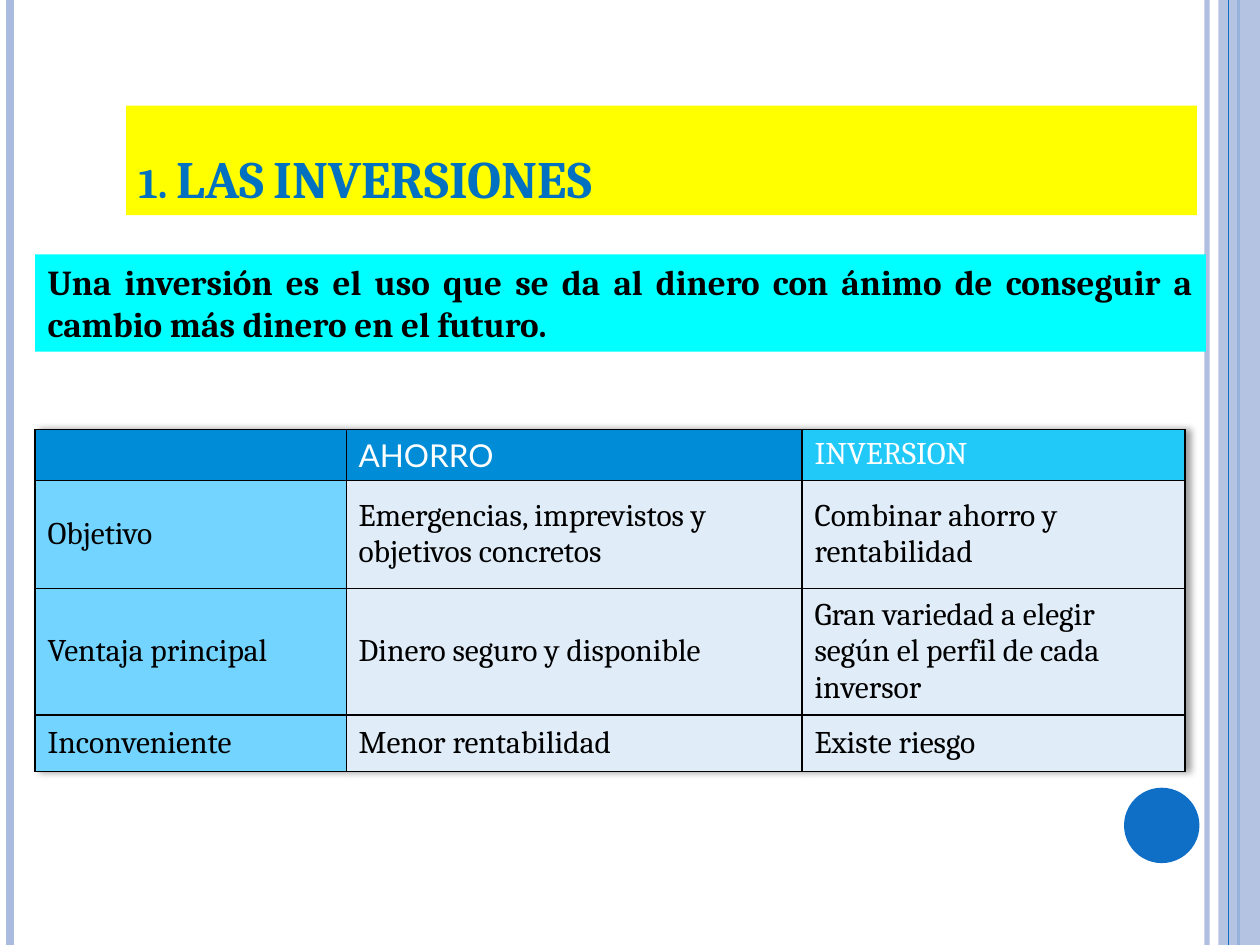
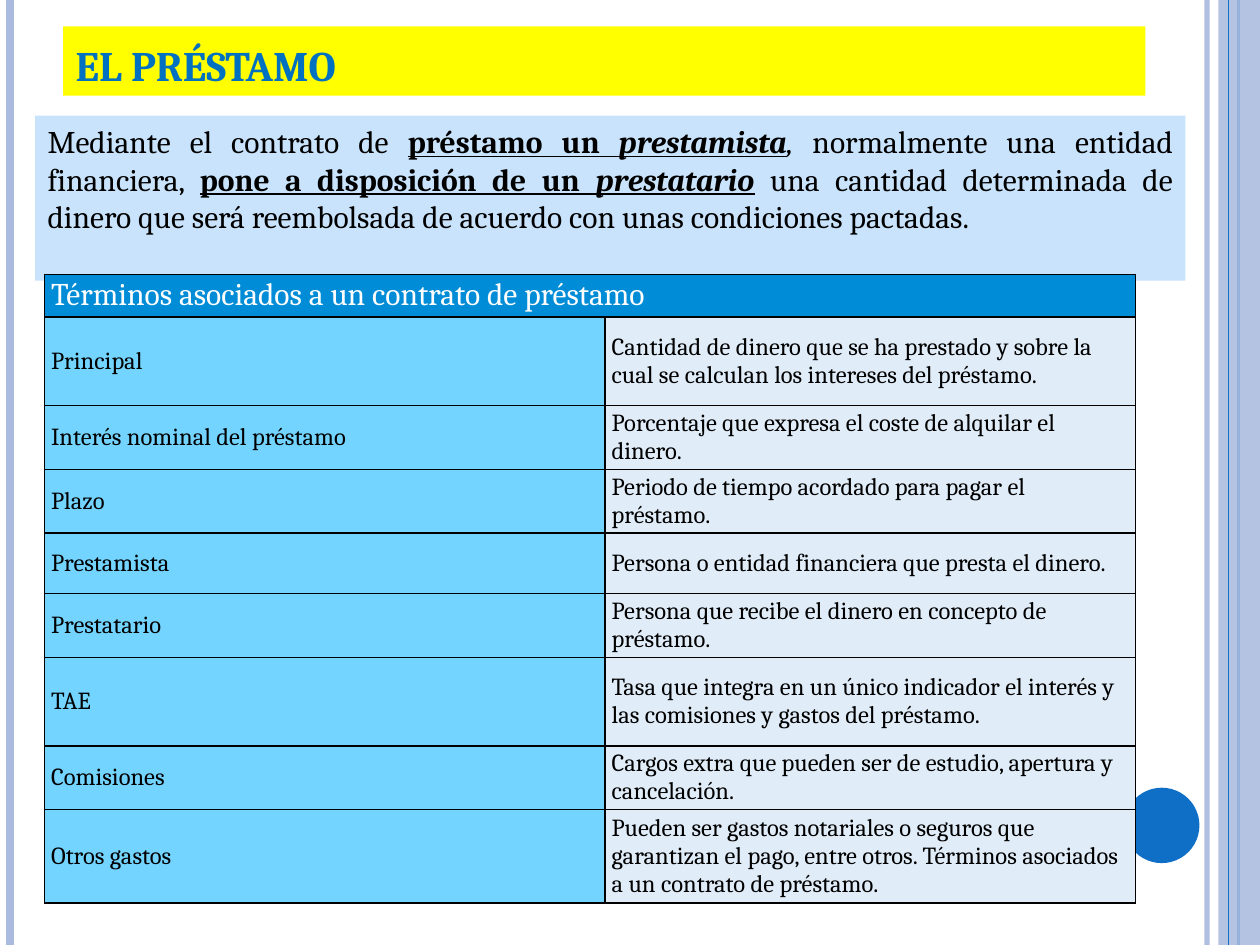
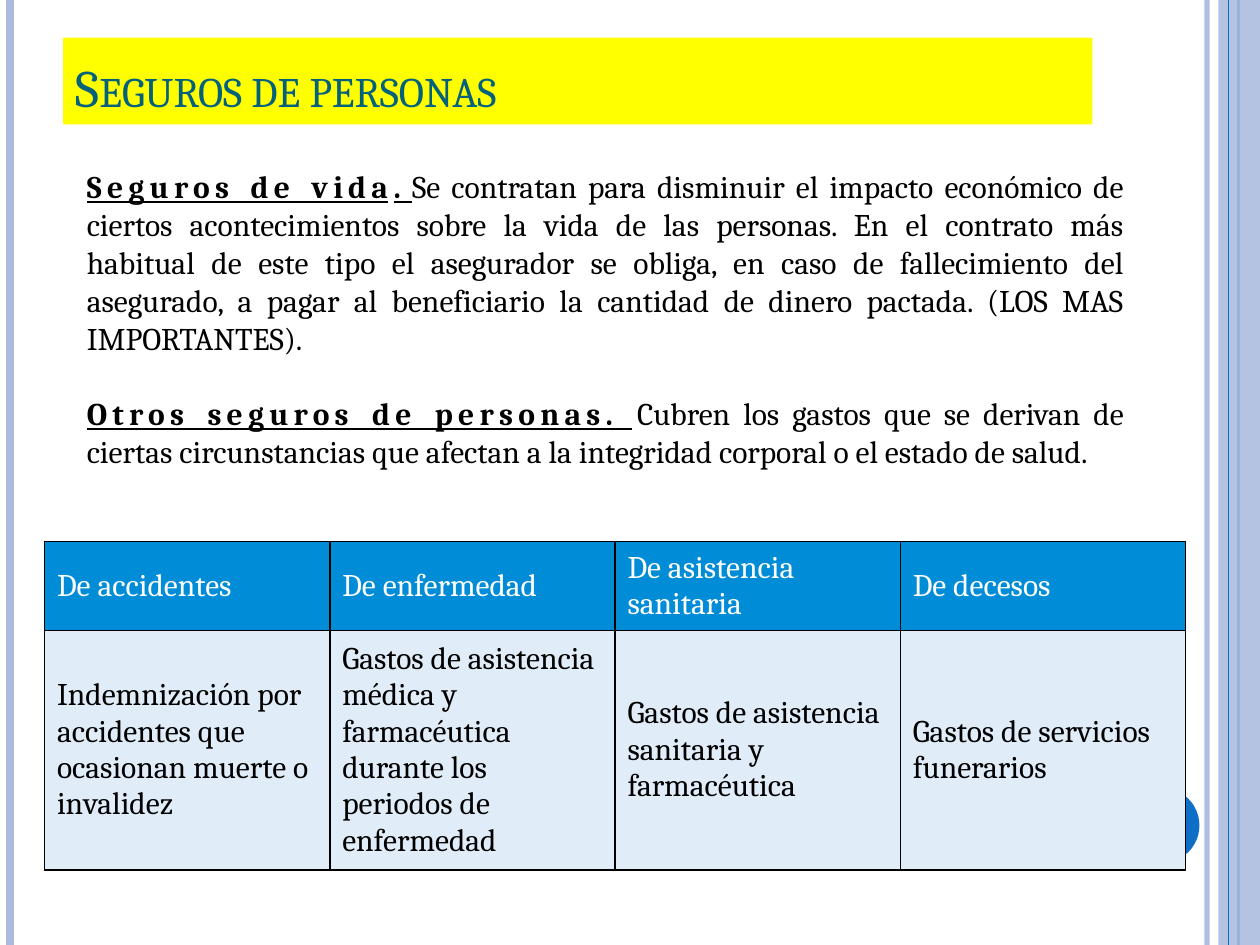
from dataclasses import dataclass

from lxml import etree
from pptx import Presentation
from pptx import util as u
from pptx.dml.color import RGBColor
from pptx.enum import shapes, text
from pptx.oxml import parse_xml
from pptx.oxml.ns import qn

NS = 'xmlns:a="http://schemas.openxmlformats.org/drawingml/2006/main"'


@dataclass(frozen=True)
class Theme:
    font: str = "Cambria"
    header_font: str = "Lato"
    black: str = "000000"
    white: str = "FFFFFF"
    band: str = "ABBBDF"
    accent: str = "0F6FC6"
    title_fill: str = "FFFF00"
    title_blue: str = "0070C0"
    title_teal: str = "04617B"
    cyan: str = "00FFFF"
    pale: str = "C8E3FB"
    header: str = "008CD6"
    header_light: str = "20C9F8"
    label: str = "73D4FF"
    cell: str = "E0ECF8"
    title_size: int = 30
    subtitle_size: int = 24
    lead_size: int = 20
    body_size: int = 18
    small_size: int = 14
    paragraph_gap: float = 21.6


T = Theme()
WIDTH, HEIGHT = 25.4, 19.05

FRAME_LINES = [
    (24.33, T.band, 3, 93),
    (0.2, T.band, 4.5, 100),
    (24.97, T.accent, 1.5, 100),
]
FRAME_INNER_LINE = (24.77, T.accent, 0.75, 100)

SLIDES = [
    {
        "title": "1. LAS INVERSIONES",
        "title_box": (2.54, 2.13, 21.59, 2.21),
        "title_style": (T.title_size, T.title_blue, True, True),
        "body_box": (0.71, 5.13, 23.6, 1.96),
        "body_fill": T.cyan,
        "body_size": T.lead_size,
        "body": [[("Una inversión es el uso que se da al dinero con ánimo de "
                   "conseguir a cambio más dinero en el futuro.", "b")]],
        "table_at": (0.71, 8.66),
        "cols": [6.27, 9.19, 7.72],
        "row_heights": [0.86, 2.18, 2.18, 1.14],
        "labels": True,
        "cell_size": T.body_size,
        "insets": (0.25, 0.13),
        "shadow": True,
        "header_fonts": {1: T.header_font},
        "light_header": 2,
        "rows": [
            ["", "AHORRO", "INVERSION"],
            ["Objetivo", "Emergencias, imprevistos y objetivos concretos",
             "Combinar ahorro y rentabilidad"],
            ["Ventaja principal", "Dinero seguro y disponible",
             "Gran variedad a elegir según el perfil de cada inversor"],
            ["Inconveniente", "Menor rentabilidad", "Existe riesgo"],
        ],
    },
    {
        "title": "EL PRÉSTAMO",
        "title_box": (1.27, 0.53, 21.82, 1.4),
        "title_style": (T.subtitle_size, T.title_blue, True, False),
        "body_box": (0.71, 2.33, 23.19, 3.33),
        "body_fill": T.pale,
        "body_size": T.body_size,
        "body": [[
            ("Mediante el contrato de ", ""),
            ("préstamo un ", "bu"),
            ("prestamista", "bui"),
            (",", "i"),
            (" normalmente una entidad financiera, ", ""),
            ("pone a disposición de un ", "bu"),
            ("prestatario", "bui"),
            (" una cantidad determinada de dinero que será reembolsada de "
             "acuerdo con unas condiciones pactadas.", ""),
        ]],
        "table_at": (0.9, 5.53),
        "cols": [11.3, 10.69],
        "row_heights": [0.84, 1.78, 1.22, 1.22, 1.22, 1.22, 1.78, 1.22, 1.78],
        "labels": True,
        "cell_size": T.small_size,
        "insets": (0.13, 0.05),
        "merge_header": True,
        "rows": [
            ["Términos asociados a un contrato de préstamo", ""],
            ["Principal", "Cantidad de dinero que se ha prestado y sobre la "
             "cual se calculan los intereses del préstamo."],
            ["Interés nominal del préstamo",
             "Porcentaje que expresa el coste de alquilar el dinero."],
            ["Plazo", "Periodo de tiempo acordado para pagar el préstamo."],
            ["Prestamista", "Persona o entidad financiera que presta el dinero."],
            ["Prestatario", "Persona que recibe el dinero en concepto de préstamo."],
            ["TAE", "Tasa que integra en un único indicador el interés y las "
             "comisiones y gastos del préstamo."],
            ["Comisiones", "Cargos extra que pueden ser de estudio, apertura y "
             "cancelación."],
            ["Otros gastos", "Pueden ser gastos notariales o seguros que "
             "garantizan el pago, entre otros. Términos asociados a un contrato "
             "de préstamo."],
        ],
    },
    {
        "title": "Seguros de personas",
        "title_box": (1.27, 0.76, 20.75, 1.75),
        "title_style": (T.title_size, T.title_teal, False, True),
        "body_box": (1.5, 3.25, 21.41, 7.19),
        "body_fill": None,
        "body_size": T.body_size,
        "body": [
            [("Seguros de vida", "bus"), (". ", "bu"),
             ("Se contratan para disminuir el impacto económico de ciertos "
              "acontecimientos sobre la vida de las personas. En el contrato más "
              "habitual de este tipo el asegurador se obliga, en caso de "
              "fallecimiento del asegurado, a pagar al beneficiario la cantidad "
              "de dinero pactada. (LOS MAS IMPORTANTES).", "")],
            [("Otros seguros de personas. ", "bus"),
             ("Cubren los gastos que se derivan de ciertas circunstancias que "
              "afectan a la integridad corporal o el estado de salud.", "")],
        ],
        "table_at": (0.9, 10.92),
        "cols": [5.75] * 4,
        "row_heights": [1.52, 4.14],
        "labels": False,
        "cell_size": T.body_size,
        "insets": (0.25, 0.13),
        "rows": [
            ["De accidentes", "De enfermedad", "De asistencia sanitaria",
             "De decesos"],
            ["Indemnización por accidentes que ocasionan muerte o invalidez",
             "Gastos de asistencia médica y farmacéutica durante los periodos "
             "de enfermedad",
             "Gastos de asistencia sanitaria y farmacéutica",
             "Gastos de servicios funerarios"],
        ],
    },
]


def cm(*values):
    return [u.Cm(v) for v in values]


def paint(fill, color, alpha=100):
    fill.solid()
    fill.fore_color.rgb = RGBColor.from_string(color)
    if alpha < 100:
        clr = fill._xPr.find(".//" + qn("a:srgbClr"))
        etree.SubElement(clr, qn("a:alpha")).set("val", str(alpha * 1000))


def style_run(r, size, color, bold=False, font=T.font):
    r.font.name, r.font.size, r.font.bold = font, u.Pt(size), bold
    r.font.color.rgb = RGBColor.from_string(color)


def add_frame_line(s, x, color, width, alpha):
    c = s.shapes.add_connector(shapes.MSO_CONNECTOR.STRAIGHT,
                               *cm(x, 0, x, HEIGHT))
    c.line.width = u.Pt(width)
    paint(c.line.fill, color, alpha)
    etree.SubElement(c._element.spPr, qn("a:effectLst"))


def add_frame_shape(s, kind, box, color, alpha=100):
    sp = s.shapes.add_shape(kind, *cm(*box))
    sp.shadow.inherit = False
    sp.line.fill.background()
    paint(sp.fill, color, alpha)


def add_frame(s):
    for line in FRAME_LINES:
        add_frame_line(s, *line)
    add_frame_shape(s, shapes.MSO_SHAPE.RECTANGLE,
                    (24.56, 0, WIDTH - 24.56, HEIGHT), T.band, 87)
    add_frame_line(s, *FRAME_INNER_LINE)
    add_frame_shape(s, shapes.MSO_SHAPE.OVAL, (22.66, 15.88, 1.52, 1.52), T.accent)


def set_title(s, d):
    size, color, bold, small_caps = d["title_style"]
    sp = s.shapes.title
    sp.left, sp.top, sp.width, sp.height = cm(*d["title_box"])
    paint(sp.fill, T.title_fill)
    tf = sp.text_frame
    tf.text = d["title"]
    tf.auto_size = text.MSO_AUTO_SIZE.NONE
    tf.vertical_anchor = text.MSO_ANCHOR.BOTTOM
    p = tf.paragraphs[0]
    p.alignment = text.PP_ALIGN.LEFT
    r = p.runs[0]
    style_run(r, size, color, bold)
    if small_caps:
        r._r.get_or_add_rPr().set("cap", "small")


def add_body(s, d):
    sp = s.shapes.add_textbox(*cm(*d["body_box"]))
    if d["body_fill"]:
        paint(sp.fill, d["body_fill"])
    tf = sp.text_frame
    tf.word_wrap = True
    for i, parts in enumerate(d["body"]):
        p = tf.add_paragraph() if i else tf.paragraphs[0]
        p.alignment = text.PP_ALIGN.JUSTIFY
        if i:
            p.space_before = u.Pt(T.paragraph_gap)
        for words, marks in parts:
            r = p.add_run()
            r.text = words
            style_run(r, d["body_size"], T.black, "b" in marks)
            r.font.italic = "i" in marks
            r.font.underline = "u" in marks
            if "s" in marks:
                r._r.get_or_add_rPr().set("spc", "300")


def add_borders(cell):
    tcPr = cell._tc.get_or_add_tcPr()
    for i, side in enumerate("LRTB"):
        tcPr.insert(i, parse_xml(
            f'<a:ln{side} {NS} w="12700"><a:solidFill><a:srgbClr val="{T.black}"/>'
            f'</a:solidFill></a:ln{side}>'))


def add_shadow(tbl):
    tbl._tbl.tblPr.insert(0, parse_xml(
        f'<a:effectLst {NS}><a:outerShdw blurRad="50800" dist="38100" algn="l">'
        f'<a:srgbClr val="{T.black}"><a:alpha val="40000"/></a:srgbClr>'
        f'</a:outerShdw></a:effectLst>'))


def add_terms_table(s, d):
    rows, cols, heights = d["rows"], d["cols"], d["row_heights"]
    tbl = s.shapes.add_table(len(rows), len(cols), *cm(
        *d["table_at"], sum(cols), sum(heights))).table
    for col, width in zip(tbl.columns, cols):
        col.width = u.Cm(width)
    for row, height in zip(tbl.rows, heights):
        row.height = u.Cm(height)
    side, edge = cm(*d["insets"])
    for i, row in enumerate(rows):
        for j, words in enumerate(row):
            cell = tbl.cell(i, j)
            light = i == 0 and j == d.get("light_header")
            if light:
                fill = T.header_light
            elif i == 0:
                fill = T.header
            else:
                fill = T.label if d["labels"] and j == 0 else T.cell
            paint(cell.fill, fill)
            add_borders(cell)
            cell.margin_left = cell.margin_right = side
            cell.margin_top = cell.margin_bottom = edge
            cell.vertical_anchor = (text.MSO_ANCHOR.TOP if light
                                    else text.MSO_ANCHOR.MIDDLE)
            if words:
                cell.text_frame.text = words
                r = cell.text_frame.paragraphs[0].runs[0]
                if i == 0:
                    font = d.get("header_fonts", {}).get(j, T.font)
                    style_run(r, T.body_size, T.white, font=font)
                else:
                    style_run(r, d["cell_size"], T.black)
    if d.get("merge_header"):
        tbl.cell(0, 0).merge(tbl.cell(0, len(cols) - 1))
    if d.get("shadow"):
        add_shadow(tbl)


def main():
    prs = Presentation()
    prs.slide_width, prs.slide_height = cm(WIDTH, HEIGHT)
    for d in SLIDES:
        s = prs.slides.add_slide(prs.slide_layouts[5])
        add_frame(s)
        set_title(s, d)
        add_body(s, d)
        add_terms_table(s, d)
    prs.save("out.pptx")


if __name__ == "__main__":
    main()
